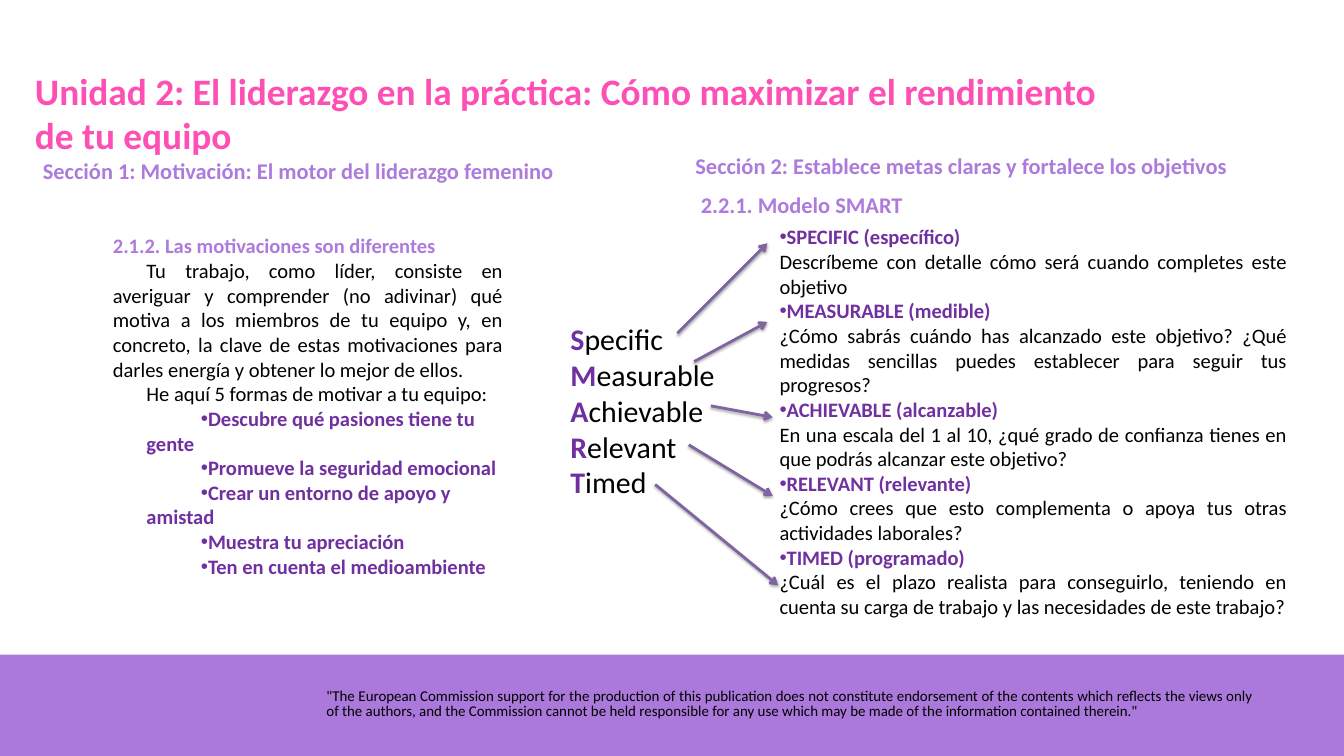
from lxml.etree import SubElement
from pptx import Presentation
from pptx.dml.color import RGBColor
from pptx.enum.shapes import MSO_CONNECTOR, MSO_SHAPE
from pptx.enum.text import MSO_ANCHOR, MSO_AUTO_SIZE, PP_ALIGN
from pptx.oxml import parse_xml
from pptx.oxml.ns import nsdecls, qn
from pptx.util import Inches, Pt

COLORS = {
    "title": "FD4FB4",
    "section": "AC7BDC",
    "accent": "7030A0",
    "text": "000000",
    "band": "AB79DB",
    "arrow": "8064A2",
}

TITLE = "Unidad 2: El liderazgo en la práctica: Cómo maximizar el rendimiento de tu equipo"
SECTION_1 = "Sección 1: Motivación: El motor del liderazgo femenino"
SECTION_2 = "Sección 2: Establece metas claras y fortalece los objetivos"
SMART_HEADING = "2.2.1. Modelo SMART"
MOTIVATION_HEADING = "2.1.2. Las motivaciones son diferentes"
MOTIVATION_TEXT = [
    "Tu trabajo, como líder, consiste en averiguar y comprender (no adivinar) qué motiva a los miembros de tu equipo y, en concreto, la clave de estas motivaciones para darles energía y obtener lo mejor de ellos.",
    "He aquí 5 formas de motivar a tu equipo:",
]
MOTIVATION_WAYS = [
    "Descubre qué pasiones tiene tu gente",
    "Promueve la seguridad emocional",
    "Crear un entorno de apoyo y amistad",
    "Muestra tu apreciación",
    "Ten en cuenta el medioambiente",
]
SMART_WORDS = ["Specific", "Measurable", "Achievable", "Relevant", "Timed"]
SMART_GOALS = [
    ("SPECIFIC (específico)", "Descríbeme con detalle cómo será cuando completes este objetivo"),
    ("MEASURABLE (medible)", "¿Cómo sabrás cuándo has alcanzado este objetivo? ¿Qué medidas sencillas puedes establecer para seguir tus progresos?"),
    ("ACHIEVABLE (alcanzable)", "En una escala del 1 al 10, ¿qué grado de confianza tienes en que podrás alcanzar este objetivo?"),
    ("RELEVANT (relevante)", "¿Cómo crees que esto complementa o apoya tus otras actividades laborales?"),
    ("TIMED (programado)", "¿Cuál es el plazo realista para conseguirlo, teniendo en cuenta su carga de trabajo y las necesidades de este trabajo?"),
]
DISCLAIMER = '"The European Commission support for the production of this publication does not constitute endorsement of the contents which reflects the views only of the authors, and the Commission cannot be held responsible for any use which may be made of the information contained therein."'
ARROWS = [
    (10.08, 4.96, 11.42, 3.62),
    (10.33, 5.38, 11.42, 4.79),
    (10.58, 6.04, 11.5, 6.21),
    (10.25, 6.62, 11.5, 7.38),
    (9.75, 7.21, 11.58, 8.71),
]

RUN_FORMATS = {
    "title": {"size": Pt(40), "bold": True},
    "section": {"size": Pt(24), "bold": True},
    "heading": {"size": Pt(22), "bold": True},
    "accent": {"size": Pt(22), "bold": True},
    "body": {"size": Pt(22), "bold": False},
    "initial": {"size": Pt(32), "bold": True},
    "rest": {"size": Pt(32), "bold": False},
    "disclaimer": {"size": Pt(16), "bold": False},
}
RUN_COLORS = {
    "title": "title", "section": "section", "heading": "section", "accent": "accent",
    "body": "text", "initial": "accent", "rest": "text", "disclaimer": "text",
}


def para(*runs, align=PP_ALIGN.JUSTIFY, left=0, first=0, bullet=False, tab=None, level=0, spacing=None):
    return {"runs": runs, "align": align, "left": left, "first": first,
            "bullet": bullet, "tab": tab, "level": level, "spacing": spacing}


def write(shape, box, paragraphs, anchor=MSO_ANCHOR.TOP, wrap=True):
    shape.left, shape.top, shape.width, shape.height = map(Inches, box)
    frame = shape.text_frame
    frame_format = {"word_wrap": wrap, "vertical_anchor": anchor,
                    "auto_size": MSO_AUTO_SIZE.SHAPE_TO_FIT_TEXT}
    for name, value in frame_format.items():
        setattr(frame, name, value)
    for index, content in enumerate(paragraphs):
        paragraph = frame.paragraphs[0] if index == 0 else frame.add_paragraph()
        properties = paragraph._p.get_or_add_pPr()
        properties.set("marL", str(Inches(content["left"])))
        properties.set("indent", str(Inches(content["first"])))
        if content["bullet"]:
            SubElement(properties, qn("a:buChar")).set("char", "•")
        else:
            SubElement(properties, qn("a:buNone"))
        if content["tab"]:
            stop = SubElement(SubElement(properties, qn("a:tabLst")), qn("a:tab"))
            stop.set("pos", str(Inches(content["tab"])))
            stop.set("algn", "l")
        paragraph_format = {"alignment": content["align"], "level": content["level"],
                            "line_spacing": content["spacing"], "space_before": Pt(0)}
        for name, value in paragraph_format.items():
            setattr(paragraph, name, value)
        for text, style in content["runs"]:
            run = paragraph.add_run()
            run.text = text
            run.font.name = "Calibri"
            for name, value in RUN_FORMATS[style].items():
                setattr(run.font, name, value)
            run.font.color.rgb = RGBColor.from_string(COLORS[RUN_COLORS[style]])


def add_text(slide, box, paragraphs, **options):
    write(slide.shapes.add_textbox(*map(Inches, box)), box, paragraphs, **options)


def add_band(slide):
    band = slide.shapes.add_shape(MSO_SHAPE.RECTANGLE, *map(Inches, (0, 9.74, 20, 1.51)))
    band.shadow.inherit = False
    band.fill.solid()
    band.fill.fore_color.rgb = RGBColor.from_string(COLORS["band"])
    band.line.fill.background()


def add_arrow(slide, ends):
    arrow = slide.shapes.add_connector(MSO_CONNECTOR.STRAIGHT, *map(Inches, ends))
    arrow.line.color.rgb = RGBColor.from_string(COLORS["arrow"])
    arrow.line.width = Pt(3)
    SubElement(arrow.line._get_or_add_ln(), qn("a:tailEnd")).set("type", "arrow")
    arrow._element.spPr.append(parse_xml(
        f'<a:effectLst {nsdecls("a")}>'
        f'<a:outerShdw blurRad="{Pt(3.1)}" dist="{Pt(1.8)}" dir="5400000" rotWithShape="0">'
        f'<a:srgbClr val="{COLORS["text"]}"><a:alpha val="35000"/></a:srgbClr>'
        '</a:outerShdw></a:effectLst>'))


def main():
    deck = Presentation()
    deck.slide_width, deck.slide_height = Inches(20), Inches(11.25)
    slide = deck.slides.add_slide(deck.slide_layouts.get_by_name("Two Content"))
    title, motivation, goals = list(slide.placeholders)[:3]

    add_band(slide)
    add_text(slide, (4.75, 10.21, 14, 0.55),
             [para((DISCLAIMER, "disclaimer"), left=0.01, spacing=Pt(16.1))])
    write(title, (0.42, 0.96, 16.42, 1.45), [para((TITLE, "title"), align=PP_ALIGN.LEFT)])

    motivation_paragraphs = [para((MOTIVATION_HEADING, "heading"))]
    motivation_paragraphs += [para(("\t" + text, "body"), tab=1) for text in MOTIVATION_TEXT]
    motivation_paragraphs += [
        para((way, "accent"), align=PP_ALIGN.LEFT, left=0.5, first=0.81, bullet=True, level=1)
        for way in MOTIVATION_WAYS]
    write(motivation, (1.58, 3.4, 6, 5.28), motivation_paragraphs, anchor=MSO_ANCHOR.MIDDLE)

    goal_paragraphs = []
    for goal, question in SMART_GOALS:
        goal_paragraphs += [para((goal, "accent"), bullet=True), para((question, "body"))]
    write(goals, (11.5, 3.29, 7.75, 6.02), goal_paragraphs)

    add_text(slide, (0.54, 2.29, 7.87, 0.5), [para((SECTION_1, "section"))], wrap=False)
    add_text(slide, (10.25, 2.21, 8.19, 0.5),
             [para((SECTION_2, "section"), align=PP_ALIGN.LEFT)], wrap=False)
    add_text(slide, (10.33, 2.79, 4.67, 0.5), [para((SMART_HEADING, "section"))])
    add_text(slide, (7.58, 4.71, 3.58, 2.79),
             [para((word[0], "initial"), (word[1:], "rest"), left=0.81) for word in SMART_WORDS],
             anchor=MSO_ANCHOR.MIDDLE)
    for ends in ARROWS:
        add_arrow(slide, ends)

    deck.save("out.pptx")


if __name__ == "__main__":
    main()
